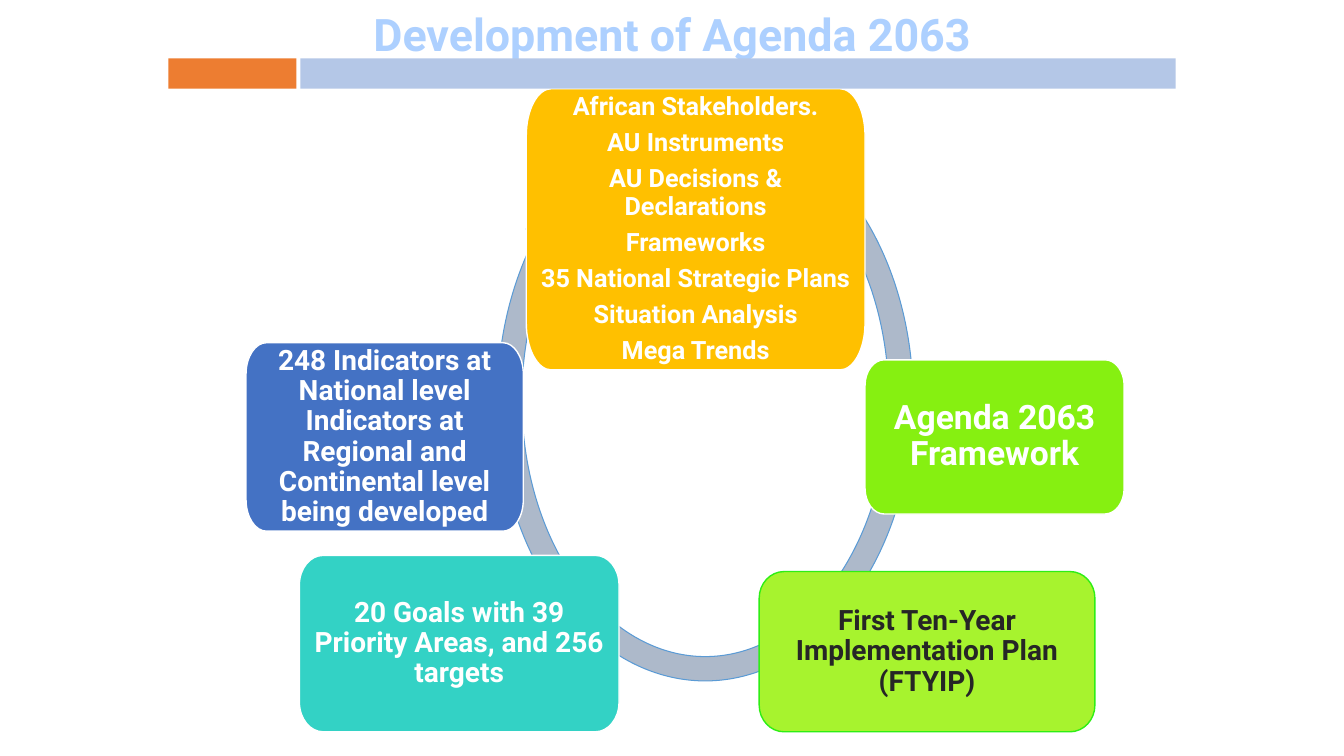
from pptx import Presentation
from pptx.dml.color import RGBColor
from pptx.enum.shapes import MSO_SHAPE
from pptx.enum.text import MSO_ANCHOR, MSO_AUTO_SIZE, PP_ALIGN
from pptx.oxml.ns import qn
from pptx.util import Inches, Pt

RECT = MSO_SHAPE.RECTANGLE
ARROW = MSO_SHAPE.CIRCULAR_ARROW
MIDDLE = MSO_ANCHOR.MIDDLE
CENTER = PP_ALIGN.CENTER
NO_FIT = MSO_AUTO_SIZE.NONE

WHITE = RGBColor(0xFF, 0xFF, 0xFF)
DARK = RGBColor(0x26, 0x26, 0x26)
SKY = RGBColor(0xAD, 0xD0, 0xFF)
GREY = RGBColor(0xAD, 0xB9, 0xCA)
BLUE = RGBColor(0x5B, 0x9B, 0xD5)
PALE = RGBColor(0xB4, 0xC7, 0xE7)
ORANGE = RGBColor(0xED, 0x7D, 0x31)
GOLD = RGBColor(0xFF, 0xC0, 0x00)
GREEN = RGBColor(0x86, 0xF0, 0x11)
LIME = RGBColor(0xA7, 0xF3, 0x2E)
LEAF = RGBColor(0x2E, 0xEE, 0x15)
TEAL = RGBColor(0x33, 0xD2, 0xC5)
NAVY = RGBColor(0x44, 0x72, 0xC4)

SOURCES = [
    "African Stakeholders.",
    "AU Instruments",
    "AU Decisions & Declarations",
    "Frameworks",
    "35 National Strategic Plans",
    "Situation Analysis",
    "Mega Trends",
]
INDICATORS = ("248 Indicators at National level Indicators at Regional and "
              "Continental level being developed")

# place, lines, text size, fill, line colour, text colour
STAGES = [
    ((5.22, 0.88, 3.36, 2.79), SOURCES, 18, GOLD, WHITE, WHITE),
    ((8.58, 3.57, 2.57, 1.53), ["Agenda 2063 Framework"], 24, GREEN, WHITE, WHITE),
    ((7.53, 5.67, 3.33, 1.59), ["First Ten-Year Implementation Plan (FTYIP)"],
     20, LIME, LEAF, DARK),
    ((2.97, 5.51, 3.17, 1.75), ["20 Goals with 39 Priority Areas, and 256 targets"],
     20, TEAL, WHITE, WHITE),
    ((2.44, 3.4, 2.75, 1.87), [INDICATORS], 20, NAVY, WHITE, WHITE),
]


def write(frame, lines, size, color, after=0.0, inset=None):
    """Fill a text frame with bold centred lines; after is a share of the size."""
    frame.word_wrap = True
    frame.auto_size = NO_FIT
    frame.vertical_anchor = MIDDLE
    if inset is not None:
        frame.margin_left = frame.margin_right = Inches(inset)
        frame.margin_top = frame.margin_bottom = Inches(inset)
    for i, line in enumerate(lines):
        para = frame.add_paragraph() if i else frame.paragraphs[0]
        para.alignment = CENTER
        para.line_spacing = 0.9
        para.space_before = Pt(0)
        para.space_after = Pt(size * after)
        run = para.add_run()
        run.text = line
        run.font.name = "Roboto"
        run.font.size = Pt(size)
        run.font.bold = True
        run.font.color.rgb = color


def outline(left, top, width, height):
    """Ends of the sides of a box with cut corners, clockwise from the left side."""
    rx, ry = width * 0.074, height / 6
    right, low = left + width, top + height
    ends = [(left, top + ry), (left + rx, top), (right - rx, top), (right, top + ry),
            (right, low - ry), (right - rx, low), (left + rx, low), (left, low - ry)]
    return [(Inches(x), Inches(y)) for x, y in ends]


def bend(shape):
    """Turn each cut corner, which is every other segment, into a curve."""
    tree = shape.element
    dots = [(int(pt.get("x")), int(pt.get("y"))) for pt in tree.iter(qn("a:pt"))]
    cuts = list(tree.iter(qn("a:lnTo")))[::2]
    for i, cut in enumerate(cuts):
        (x0, y0), (x1, y1) = dots[2 * i:2 * i + 2]
        tip = (x1, y0) if i % 2 else (x0, y1)
        cut.tag = qn("a:cubicBezTo")
        for n, (x, y) in enumerate([(x0, y0), (x1, y1)]):
            pt = cut.makeelement(qn("a:pt"))
            pt.set("x", str(round(x + 0.55 * (tip[0] - x))))
            pt.set("y", str(round(y + 0.55 * (tip[1] - y))))
            cut.insert(n, pt)


class Deck:
    def __init__(self):
        self.prs = Presentation()
        self.prs.slide_width = Inches(13.33)
        self.prs.slide_height = Inches(7.5)
        self.slide = self.prs.slides.add_slide(self.prs.slide_layouts[5])
        self.shapes = self.slide.shapes

    def paint(self, shape, fill, line=None, weight=1):
        shape.shadow.inherit = False
        shape.fill.solid()
        shape.fill.fore_color.rgb = fill
        if line is None:
            shape.line.fill.background()
        else:
            shape.line.color.rgb = line
            shape.line.width = Pt(weight)

    def title(self, text, place):
        head = self.shapes.title
        head.left, head.top, head.width, head.height = map(Inches, place)
        write(head.text_frame, [text], 32, SKY)

    def preset(self, kind, place, fill, line=None, weight=1, adjust=()):
        shape = self.shapes.add_shape(kind, *map(Inches, place))
        for i, value in enumerate(adjust):
            shape.adjustments[i] = value
        self.paint(shape, fill, line, weight)

    def stage(self, place, lines, size, fill, line, color):
        first, *rest = outline(*place)
        pen = self.shapes.build_freeform(*first)
        pen.add_line_segments(rest + [first], close=True)
        box = pen.convert_to_shape()
        bend(box)
        self.paint(box, fill, line)
        write(box.text_frame, lines, size, color, after=0.35, inset=0.14)


def main():
    deck = Deck()
    deck.title("Development of Agenda 2063", (1.67, 0, 10, 0.73))
    deck.preset(ARROW, (4.8, 1.03, 4.39, 5.86), GREY, BLUE, 0.75,
                (0.055, 3.307, 133.774, 176.336, 0.058))
    for stage in STAGES:
        deck.stage(*stage)
    deck.preset(RECT, (2.98, 0.58, 8.68, 0.3), PALE)
    deck.preset(RECT, (1.67, 0.58, 1.27, 0.3), ORANGE)
    deck.prs.save("out.pptx")


if __name__ == "__main__":
    main()
